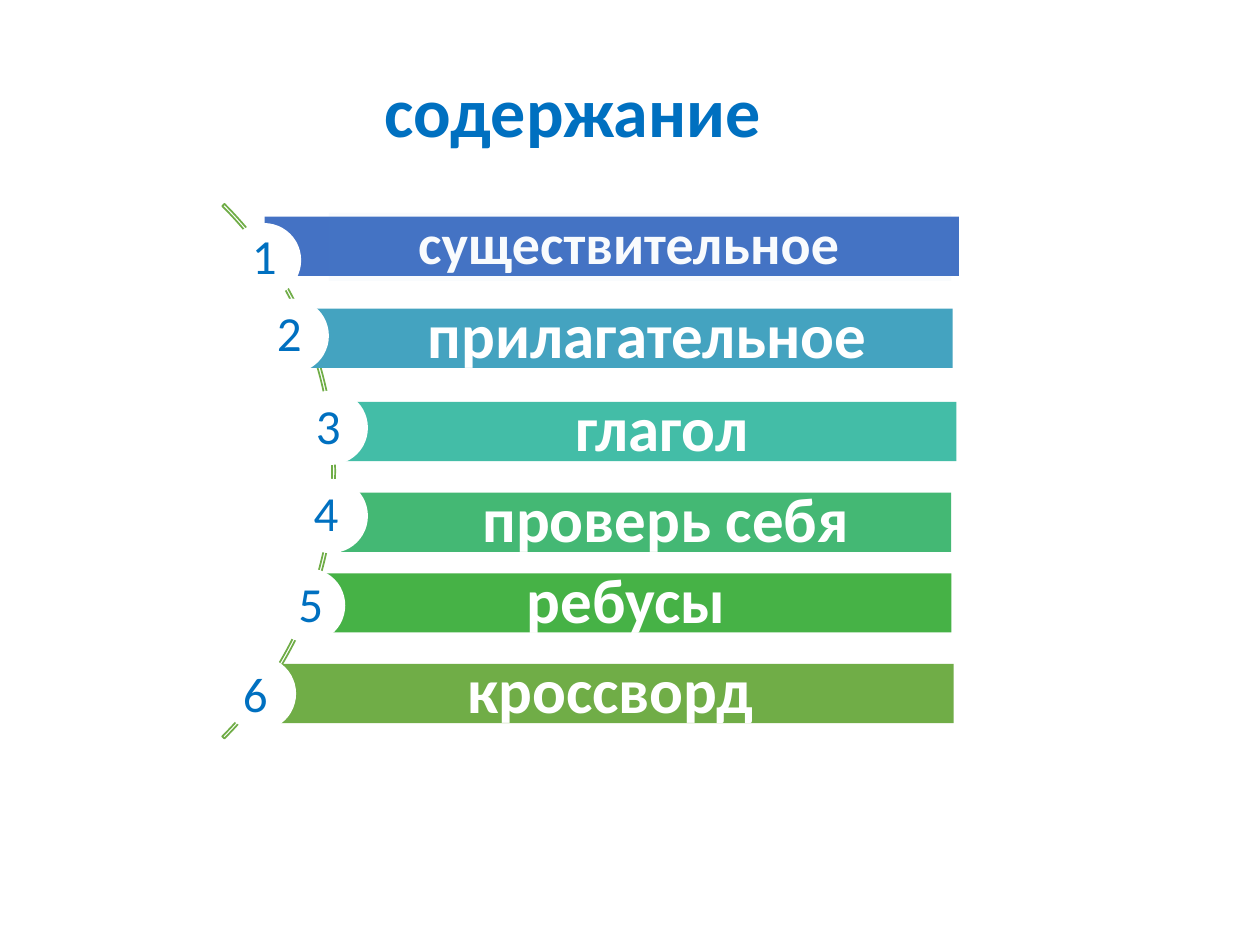
from lxml.etree import SubElement
from pptx import Presentation
from pptx.dml.color import RGBColor
from pptx.enum.shapes import MSO_SHAPE
from pptx.enum.text import MSO_ANCHOR, PP_ALIGN
from pptx.oxml.ns import qn
from pptx.util import Inches, Pt

WHITE = RGBColor(0xFF, 0xFF, 0xFF)
BLUE = RGBColor(0x00, 0x70, 0xC0)
GREEN = RGBColor(0x70, 0xAD, 0x47)
SKY = RGBColor(0x5B, 0x9B, 0xD5)
INDIGO = RGBColor(0x44, 0x72, 0xC4)
AZURE = RGBColor(0x44, 0xA3, 0xC0)
TEAL = RGBColor(0x43, 0xBD, 0xA7)
JADE = RGBColor(0x44, 0xB8, 0x74)
LEAF = RGBColor(0x46, 0xB2, 0x46)

BAR = 0.47
DISC = 0.59
MID = PP_ALIGN.CENTER
LEFT = PP_ALIGN.LEFT

ROWS = [
    ("существительное", INDIGO, 32, MID, 0.37, (2.1, 1.72, 5.51), (1.8, 1.77), (1.9, 1.74)),
    ("прилагательное", AZURE, 36, MID, 0.37, (2.44, 2.45, 5.12), (2.02, 2.37), (2.1, 2.35)),
    ("глагол", TEAL, 36, MID, 0.37, (2.65, 3.19, 4.94), (2.33, 3.1), (2.41, 3.09)),
    ("проверь себя", JADE, 36, LEFT, 1.22, (2.61, 3.91, 4.94), (2.33, 3.8), (2.39, 3.78)),
    ("ребусы", LEAF, 36, LEFT, 1.75, (2.43, 4.55, 5.12), (2.15, 4.51), (2.27, 4.5)),
    ("кроссворд", GREEN, 36, LEFT, 1.65, (2.06, 5.27, 5.51), (1.76, 5.21), (1.83, 5.22)),
]


def style(item, form):
    for key, value in form.items():
        setattr(item, key, value)


def write(frame, text, size, color, bold=False):
    para = frame.paragraphs[0]
    run = para.add_run()
    run.text = text
    style(run.font, {"name": "Calibri", "size": Pt(size), "bold": bold})
    run.font.color.rgb = color
    return para


def add_shape(slide, kind, box, fill=None):
    shape = slide.shapes.add_shape(kind, *map(Inches, box))
    shape.shadow.inherit = False
    shape.line.fill.background()
    if fill is None:
        shape.fill.background()
    else:
        shape.fill.solid()
        shape.fill.fore_color.rgb = fill
    return shape


def add_label(slide, box, text, size, bold=False):
    frame = slide.shapes.add_textbox(*map(Inches, box)).text_frame
    frame.word_wrap = False
    write(frame, text, size, BLUE, bold)


def add_arc(slide, box):
    arc = add_shape(slide, MSO_SHAPE.BLOCK_ARC, box)
    for index, value in enumerate((189, 27, 0.004)):
        arc.adjustments[index] = value
    arc.line.color.rgb = GREEN
    arc.line.width = Pt(1)


def add_bar(slide, box, text, fill, size, align, inset):
    frame = add_shape(slide, MSO_SHAPE.RECTANGLE, box, fill).text_frame
    style(frame, {
        "word_wrap": True,
        "vertical_anchor": MSO_ANCHOR.MIDDLE,
        "margin_left": Inches(inset),
        "margin_right": Inches(0.1),
        "margin_top": Inches(0.1),
        "margin_bottom": Inches(0.1),
    })
    para = write(frame, text, size, WHITE, True)
    style(para, {"alignment": align, "line_spacing": 0.9})


def add_veil(slide, box):
    veil = add_shape(slide, MSO_SHAPE.RECTANGLE, box, SKY)
    color = next(veil.fill._xPr.iter(qn("a:srgbClr")))
    SubElement(color, qn("a:alpha"), val="3000")


def add_list(slide):
    add_arc(slide, (-3.34, 0.74, 6, 6))
    for text, fill, size, align, inset, bar, disc, spot in ROWS:
        add_bar(slide, (*bar, BAR), text, fill, size, align, inset)
        add_shape(slide, MSO_SHAPE.OVAL, (*disc, DISC, DISC), WHITE)
    for number, row in enumerate(ROWS, 1):
        add_label(slide, (*row[-1], 0.4, 0.57), str(number), 28)
    add_veil(slide, (2.61, 1.69, 4.94, 0.54))


def main():
    deck = Presentation()
    style(deck, {"slide_width": Inches(10), "slide_height": Inches(7.5)})
    slide = deck.slides.add_slide(deck.slide_layouts[6])
    add_label(slide, (2.95, 0.49, 3.21, 0.77), "содержание", 40, True)
    add_list(slide)
    deck.save("out.pptx")


if __name__ == "__main__":
    main()
